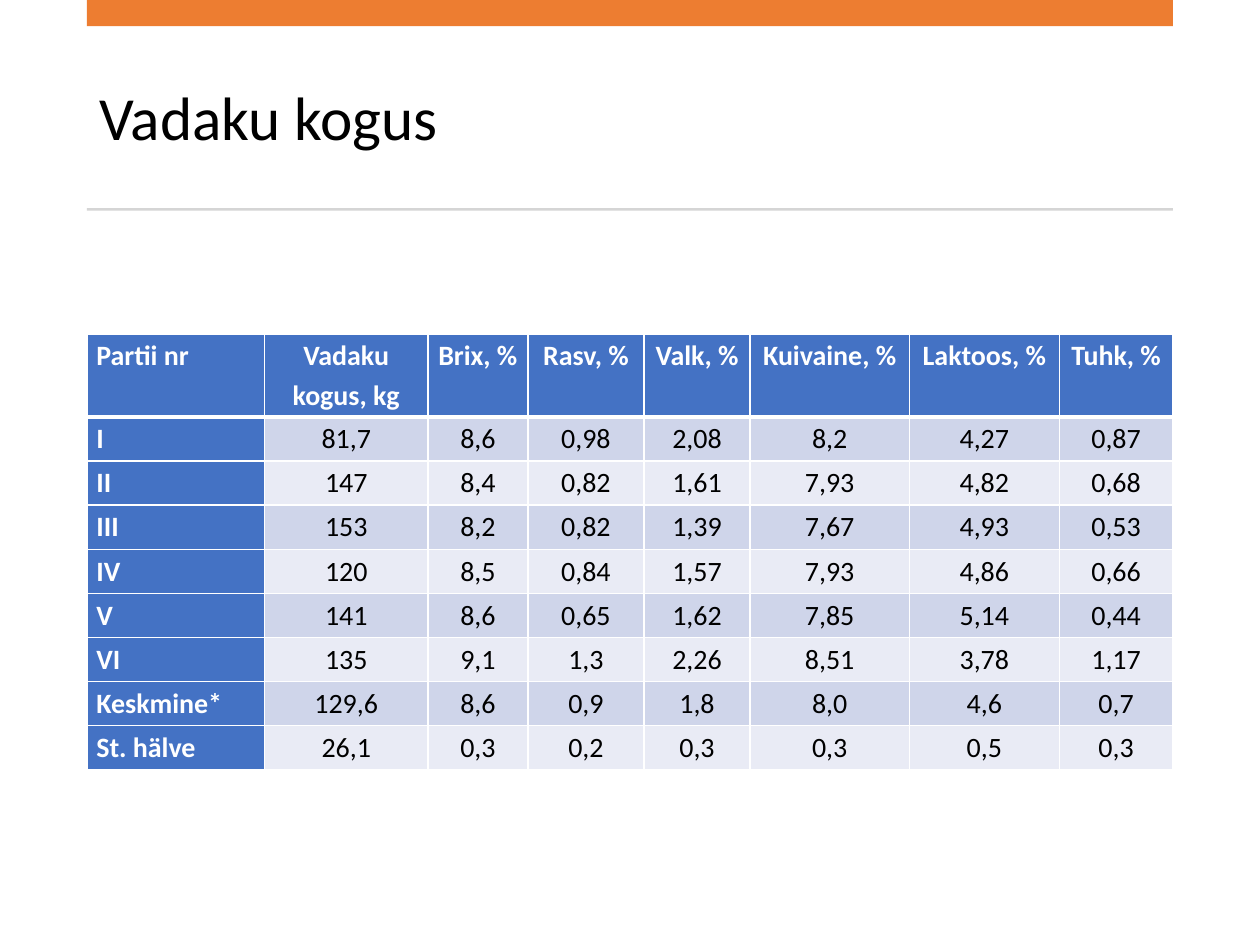
from dataclasses import dataclass

from lxml import etree
from pptx import Presentation
from pptx import util as u
from pptx.dml import color
from pptx.enum import shapes, text
from pptx.oxml import ns

Pt = u.Pt


@dataclass(frozen=True)
class Theme:
    font: str = "Calibri"
    title_size: float = 35
    table_size: float = 16
    ink: str = "000000"
    white: str = "FFFFFF"
    accent: str = "ED7D31"
    rule: str = "D5D5D5"
    head: str = "4472C4"
    bands: tuple = ("CFD5EA", "E9EBF5")


THEME = Theme()

COL_WIDTHS = [101.5, 93.4, 57.1, 66.4, 60.6, 91, 85.8, 64.8]
HEAD_HEIGHT, ROW_HEIGHT = 47.5, 25.2
ROWS = [
    ["Partii nr", "Vadaku kogus, kg", "Brix, %", "Rasv, %", "Valk, %",
     "Kuivaine, %", "Laktoos, %", "Tuhk, %"],
    ["I", "81,7", "8,6", "0,98", "2,08", "8,2", "4,27", "0,87"],
    ["II", "147", "8,4", "0,82", "1,61", "7,93", "4,82", "0,68"],
    ["III", "153", "8,2", "0,82", "1,39", "7,67", "4,93", "0,53"],
    ["IV", "120", "8,5", "0,84", "1,57", "7,93", "4,86", "0,66"],
    ["V", "141", "8,6", "0,65", "1,62", "7,85", "5,14", "0,44"],
    ["VI", "135", "9,1", "1,3", "2,26", "8,51", "3,78", "1,17"],
    ["Keskmine*", "129,6", "8,6", "0,9", "1,8", "8,0", "4,6", "0,7"],
    ["St. hälve", "26,1", "0,3", "0,2", "0,3", "0,3", "0,5", "0,3"],
]


def rgb(value):
    return color.RGBColor.from_string(value)


def set_all(obj, values):
    for name, value in values.items():
        setattr(obj, name, value)


def write(p, words, size, ink, bold=False, **para):
    set_all(p, para)
    r = p.add_run()
    r.text = words
    set_all(r.font, {"name": THEME.font, "size": Pt(size), "bold": bold})
    r.font.color.rgb = rgb(ink)


def add_bar(s, box, fill):
    sp = s.shapes.add_shape(shapes.MSO_SHAPE.RECTANGLE, *map(Pt, box))
    sp.shadow.inherit = False
    sp.fill.solid()
    sp.fill.fore_color.rgb = rgb(fill)
    sp.line.fill.background()


def add_title(s, box, words):
    tf = s.shapes.add_textbox(*map(Pt, box)).text_frame
    set_all(tf, {"word_wrap": True, "vertical_anchor": text.MSO_ANCHOR.MIDDLE})
    write(tf.paragraphs[0], words, THEME.title_size, THEME.ink, line_spacing=0.9)


def set_borders(cell, **widths):
    tc_pr = cell._tc.get_or_add_tcPr()
    for side, width in widths.items():
        ln = etree.SubElement(tc_pr, ns.qn(f"a:ln{side}"), w=str(Pt(width)))
        fill = etree.SubElement(ln, ns.qn("a:solidFill"))
        etree.SubElement(fill, ns.qn("a:srgbClr"), val=THEME.white)


def add_data_table(s, box, rows):
    table = s.shapes.add_table(len(rows), len(rows[0]), *map(Pt, box)).table
    for column, width in zip(table.columns, COL_WIDTHS):
        column.width = Pt(width)
    for i, row in enumerate(rows):
        table.rows[i].height = Pt(ROW_HEIGHT if i else HEAD_HEIGHT)
        for j, words in enumerate(row):
            cell = table.cell(i, j)
            label = i == 0 or j == 0
            set_all(cell, {"margin_left": Pt(5.4), "margin_right": Pt(5.4),
                           "margin_top": 0, "margin_bottom": 0})
            # A thick line parts the header row from the body
            set_borders(cell, L=1, R=1, T=3 if i == 1 else 1, B=1 if i else 3)
            cell.fill.solid()
            cell.fill.fore_color.rgb = rgb(
                THEME.head if label else THEME.bands[(i - 1) % 2])
            write(cell.text_frame.paragraphs[0], words, THEME.table_size,
                  THEME.white if label else THEME.ink, label,
                  alignment=text.PP_ALIGN.CENTER if j else text.PP_ALIGN.LEFT,
                  line_spacing=1.15, space_after=Pt(10))


def main():
    prs = Presentation()
    set_all(prs, {"slide_width": Pt(720), "slide_height": Pt(540)})
    s = prs.slides.add_slide(prs.slide_layouts[6])
    left, width = 49.7, 620.6

    # Heading with its bar and rule
    add_title(s, (left, 26.6, width, 85), "Vadaku kogus")
    add_bar(s, (left, 0, width, 15), THEME.accent)
    add_bar(s, (left, 119, width, 1.4), THEME.rule)

    # Whey quantity and composition by batch
    height = HEAD_HEIGHT + ROW_HEIGHT * (len(ROWS) - 1)
    add_data_table(s, (left, 190.8, width, height), ROWS)

    prs.save("out.pptx")


if __name__ == "__main__":
    main()
